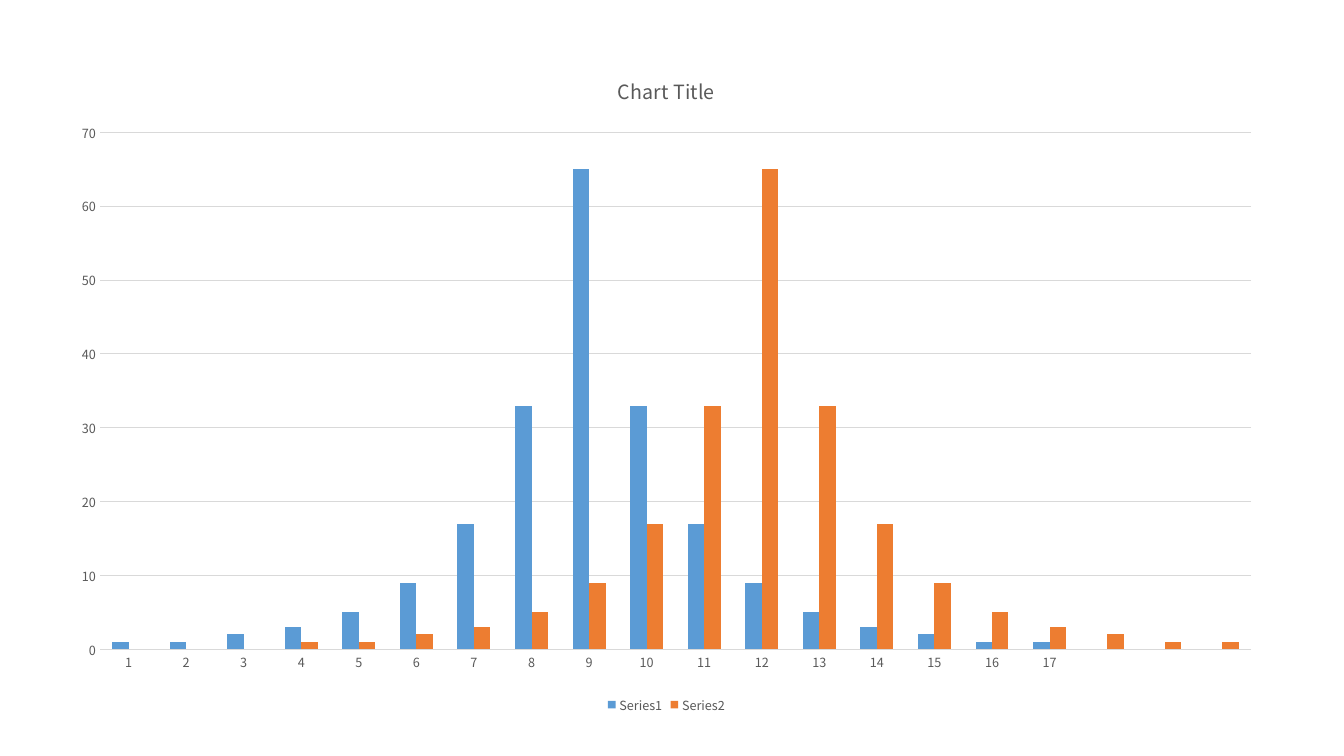
"""Build a slide with a clustered column chart of two mirrored series."""
from dataclasses import dataclass

from pptx import Presentation
from pptx.chart.data import CategoryChartData
from pptx.dml.color import RGBColor
from pptx.enum.chart import XL_CHART_TYPE, XL_LEGEND_POSITION, XL_TICK_MARK
from pptx.util import Inches, Pt

COLUMN = XL_CHART_TYPE.COLUMN_CLUSTERED
BOTTOM = XL_LEGEND_POSITION.BOTTOM
NO_TICK = XL_TICK_MARK.NONE


@dataclass(frozen=True)
class Theme:
    face: str = "Noto Sans CJK JP"
    text: RGBColor = RGBColor(0x59, 0x59, 0x59)
    grid: RGBColor = RGBColor(0xD9, 0xD9, 0xD9)
    bars: tuple = (RGBColor(0x5B, 0x9B, 0xD5), RGBColor(0xED, 0x7D, 0x31))
    title: Pt = Pt(14)
    label: Pt = Pt(9)
    rule: Pt = Pt(0.75)


theme = Theme()


def style(font, size):
    font.name = theme.face
    font.size = size
    font.bold = False
    font.color.rgb = theme.text


deck = Presentation()
deck.slide_width = Inches(13.33)
deck.slide_height = Inches(7.5)
slide = deck.slides.add_slide(deck.slide_layouts[6])

rise = [1, 1, 2, 3, 5, 9, 17, 33]
peak = rise + [65] + rise[::-1]
gap = [None] * 3

data = CategoryChartData()
data.categories = [str(n) for n in range(1, 18)] + [""] * 3
data.add_series("Series1", peak + gap)
data.add_series("Series2", gap + peak)

frame = slide.shapes.add_chart(
    COLUMN, Inches(0.57), Inches(0.51), Inches(12.08), Inches(6.61), data
)
chart = frame.chart
style(chart.font, theme.label)

chart.has_title = True
title = chart.chart_title.text_frame
title.text = "Chart Title"
style(title.paragraphs[0].runs[0].font, theme.title)

chart.has_legend = True
chart.legend.position = BOTTOM
chart.legend.include_in_layout = False
style(chart.legend.font, theme.label)

plot = chart.plots[0]
plot.vary_by_categories = False
plot.gap_width = 150
plot.overlap = 0
for series, color in zip(plot.series, theme.bars):
    series.format.fill.solid()
    series.format.fill.fore_color.rgb = color
    series.format.line.fill.background()

for axis in (chart.category_axis, chart.value_axis):
    axis.major_tick_mark = NO_TICK
    axis.minor_tick_mark = NO_TICK
    axis.format.line.fill.background()
    style(axis.tick_labels.font, theme.label)

scale = chart.value_axis
scale.minimum_scale = 0
scale.maximum_scale = 70
scale.major_unit = 10
scale.has_major_gridlines = True
grid = scale.major_gridlines.format.line
grid.color.rgb = theme.grid
grid.width = theme.rule

deck.save("out.pptx")
